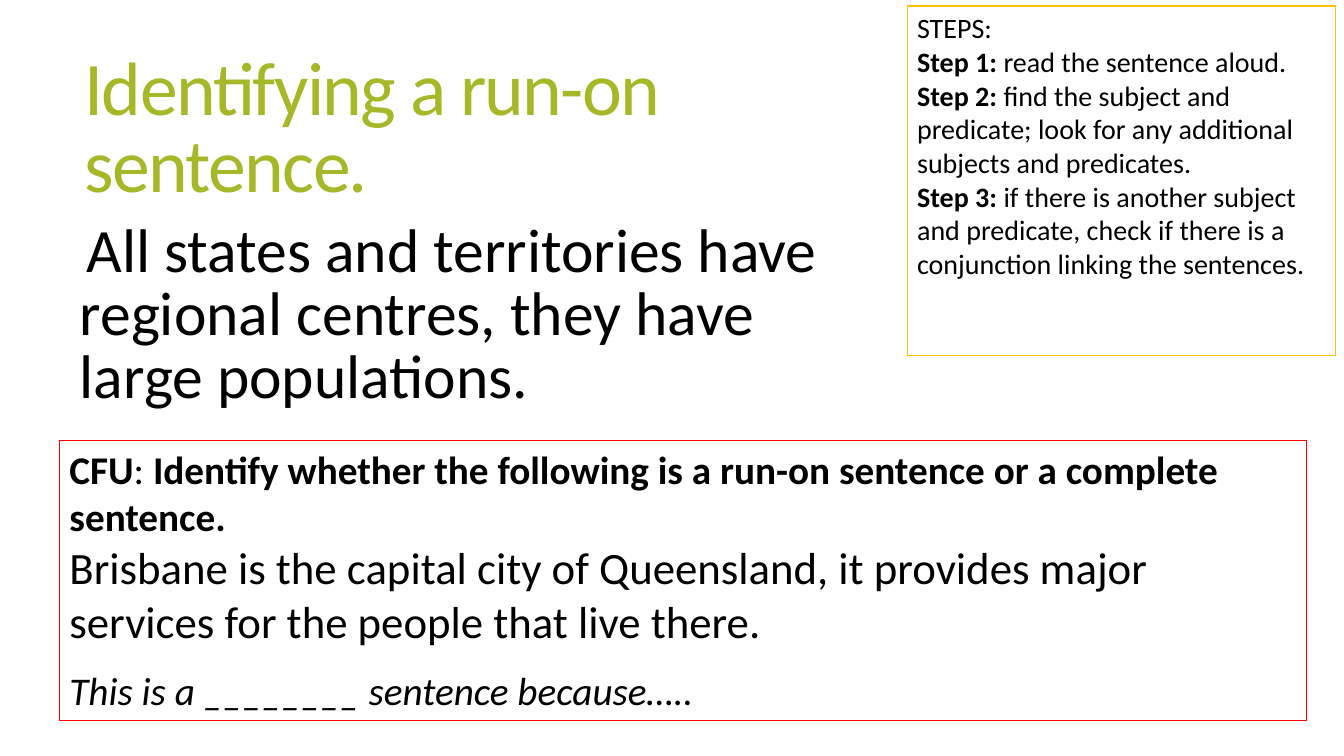
import pptx
import pptx.util
import pptx.dml.color
import pptx.enum.shapes
import pptx.enum.text
import pptx.oxml.ns
import lxml.etree

LIME = pptx.dml.color.RGBColor(0xA6, 0xB7, 0x27)
BLACK = pptx.dml.color.RGBColor(0, 0, 0)
AMBER = pptx.dml.color.RGBColor(0xFF, 0xC0, 0)
RED = pptx.dml.color.RGBColor(0xFF, 0, 0)

deck = pptx.Presentation()
deck.slide_width = pptx.util.Inches(13.33)
deck.slide_height = pptx.util.Inches(7.5)
COLUMN = deck.slide_width / 100
ROW = deck.slide_height / 100
slide = deck.slides.add_slide(deck.slide_layouts[1])


def place(left, top, width, height):
    return {
        "left": int(left * COLUMN),
        "top": int(top * ROW),
        "width": int(width * COLUMN),
        "height": int(height * ROW),
    }


def write(paragraph, text, size, color=BLACK, **style):
    run = paragraph.add_run()
    run.text = text
    run.font.color.rgb = color
    font_format = {"name": "Calibri", "size": pptx.util.Pt(size), **style}
    for key, value in font_format.items():
        setattr(run.font, key, value)
    return run


heading = slide.shapes.title
example = slide.placeholders[1]
headline_parts = [
    (heading, place(5.55, 5.2, 59.93, 24.13), pptx.enum.text.MSO_ANCHOR.MIDDLE,
     "Identifying a run-on sentence.", 54, LIME, 0),
    (example, place(4.43, 28.8, 60.6, 54.93), pptx.enum.text.MSO_ANCHOR.TOP,
     "All states and territories have regional centres, they have large populations.",
     44, BLACK, 13),
]
for part, position, anchor, wording, size, color, gap in headline_parts:
    for key, value in position.items():
        setattr(part, key, value)
    frame_format = {
        "word_wrap": True,
        "auto_size": pptx.enum.text.MSO_AUTO_SIZE.NONE,
        "vertical_anchor": anchor,
    }
    for key, value in frame_format.items():
        setattr(part.text_frame, key, value)
    paragraph = part.text_frame.paragraphs[0]
    paragraph_format = {
        "alignment": pptx.enum.text.PP_ALIGN.LEFT,
        "line_spacing": 0.85,
        "space_before": pptx.util.Pt(gap),
    }
    for key, value in paragraph_format.items():
        setattr(paragraph, key, value)
    write(paragraph, wording, size, color)

heading.text_frame.paragraphs[0].runs[0].font._element.set("spc", "-120")

hanging = pptx.util.Inches(0.1)
example_properties = example.text_frame.paragraphs[0]._p.get_or_add_pPr()
example_properties.set("marL", str(hanging))
example_properties.set("indent", str(-hanging))
bullet = lxml.etree.SubElement(example_properties, pptx.oxml.ns.qn("a:buChar"))
bullet.set("char", " ")

BOLD = {"bold": True}
PLAIN = {"bold": False}
steps = [
    (0, [("STEPS:", 20, PLAIN)]),
    (0, [("Step 1: ", 20, BOLD), ("read the sentence aloud.", 20, PLAIN)]),
    (0, [("Step 2: ", 20, BOLD),
         ("find the subject and predicate; look for any additional subjects and predicates.",
          20, PLAIN)]),
    (0, [("Step 3: ", 20, BOLD),
         ("if there is another subject and predicate, check if there is "
          "a conjunction linking the sentences.", 20, PLAIN)]),
]
check = [
    (0, [("CFU", 28, BOLD), (": ", 28, PLAIN),
         ("Identify whether the following is a run-on sentence or a complete sentence.",
          28, BOLD)]),
    (0, [("Brisbane is the capital city of Queensland, it provides major services "
          "for the people that live there.", 32, PLAIN)]),
    (13.4, [("This is a ________ sentence because…..", 28, {"italic": True})]),
]
boxes = [
    (place(67.5, 0.8, 31.88, 46.27), AMBER, steps),
    (place(4.43, 58.27, 92.78, 37.07), RED, check),
]
for position, outline, paragraphs in boxes:
    box = slide.shapes.add_shape(pptx.enum.shapes.MSO_SHAPE.RECTANGLE, **position)
    box.shadow.inherit = False
    box.fill.background()
    box.line.color.rgb = outline
    box.line.width = pptx.util.Pt(0.75)
    frame_format = {
        "word_wrap": True,
        "auto_size": pptx.enum.text.MSO_AUTO_SIZE.SHAPE_TO_FIT_TEXT,
        "vertical_anchor": pptx.enum.text.MSO_ANCHOR.TOP,
    }
    for key, value in frame_format.items():
        setattr(box.text_frame, key, value)
    for index, (gap, runs) in enumerate(paragraphs):
        paragraph = box.text_frame.add_paragraph() if index else box.text_frame.paragraphs[0]
        paragraph.alignment = pptx.enum.text.PP_ALIGN.LEFT
        paragraph.space_before = pptx.util.Pt(gap)
        for wording, size, style in runs:
            write(paragraph, wording, size, **style)

deck.save("out.pptx")
